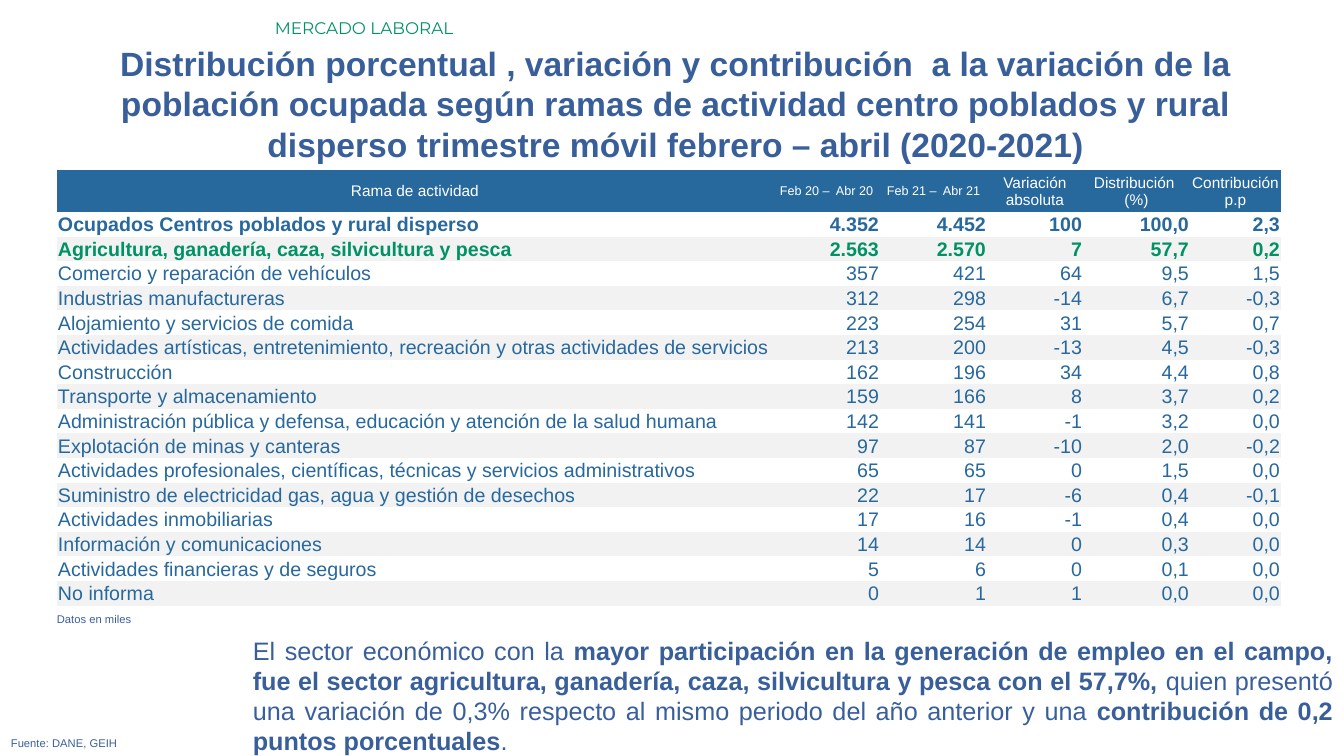
"""Build the slide on employment by branch of activity in rural areas."""
from pptx import Presentation
from pptx.dml.color import RGBColor
from pptx.enum.text import MSO_ANCHOR, MSO_AUTO_SIZE, PP_ALIGN
from pptx.util import Pt

SCALE = 914400 / 100.8
BLUE = RGBColor(0x39, 0x5F, 0x9B)
TEAL = RGBColor(0x27, 0x68, 0x9D)
GREEN = RGBColor(0x00, 0x91, 0x65)
MINT = RGBColor(0x00, 0x92, 0x67)
GRAY = RGBColor(0xF2, 0xF2, 0xF2)
WHITE = RGBColor(0xFF, 0xFF, 0xFF)
PLAIN = "{2D5ABB26-0587-4C30-8999-92F81FD0307C}"


def px(n):
    return round(n * SCALE)


def style(font, color, **form):
    for key, value in form.items():
        setattr(font, key, value)
    font.color.rgb = color


deck = Presentation()
deck.slide_width, deck.slide_height = px(1344), px(756)
slide = deck.slides.add_slide(deck.slide_layouts[6])

texts = [
    ((45, 38, 1261, 132), PP_ALIGN.CENTER, "Arial", 24, BLUE, [
        ("Distribución porcentual , variación y contribución  a la variación de la "
         "población ocupada según ramas de actividad centro poblados y rural disperso "
         "trimestre móvil febrero – abril (2020-2021)", True)]),
    ((265, 13, 1079, 30), PP_ALIGN.LEFT, "Montserrat", 12, MINT, [("MERCADO LABORAL", False)]),
    ((243, 630, 1100, 132), PP_ALIGN.JUSTIFY, "Arial", 18, BLUE, [
        ("El sector económico con la ", False),
        ("mayor participación en la generación de empleo en el campo, fue el sector "
         "agricultura, ganadería, caza, silvicultura y pesca con el 57,7%, ", True),
        ("quien presentó una variación de 0,3% respecto al mismo periodo del año "
         "anterior y una ", False),
        ("contribución de 0,2 puntos porcentuales", True),
        (".", False)]),
    ((1, 731, 1301, 24), PP_ALIGN.JUSTIFY, "Arial", 8, BLUE, [("Fuente: DANE, GEIH", False)]),
    ((47, 607, 1301, 24), PP_ALIGN.JUSTIFY, "Arial", 8, BLUE, [("Datos en miles", False)]),
]
for place, align, name, size, color, runs in texts:
    frame = slide.shapes.add_textbox(*map(px, place)).text_frame
    frame.word_wrap = True
    frame.auto_size = MSO_AUTO_SIZE.SHAPE_TO_FIT_TEXT
    para = frame.paragraphs[0]
    para.alignment = align
    for words, bold in runs:
        run = para.add_run()
        run.text = words
        style(run.font, color, name=name, size=Pt(size), bold=bold)

rows = [
    ("Rama de actividad", "Feb 20 –  Abr 20", "Feb 21 –  Abr 21",
     "Variación\vabsoluta", "Distribución \n(%)", "Contribución \np.p"),
    ("Ocupados Centros poblados y rural disperso", "4.352", "4.452", "100", "100,0", "2,3"),
    ("Agricultura, ganadería, caza, silvicultura y pesca", "2.563", "2.570", "7", "57,7", "0,2"),
    ("Comercio y reparación de vehículos", "357", "421", "64", "9,5", "1,5"),
    ("Industrias manufactureras", "312", "298", "-14", "6,7", "-0,3"),
    ("Alojamiento y servicios de comida", "223", "254", "31", "5,7", "0,7"),
    ("Actividades artísticas, entretenimiento, recreación y otras actividades de servicios",
     "213", "200", "-13", "4,5", "-0,3"),
    ("Construcción", "162", "196", "34", "4,4", "0,8"),
    ("Transporte y almacenamiento", "159", "166", "8", "3,7", "0,2"),
    ("Administración pública y defensa, educación y atención de la salud humana",
     "142", "141", "-1", "3,2", "0,0"),
    ("Explotación de minas y canteras", "97", "87", "-10", "2,0", "-0,2"),
    ("Actividades profesionales, científicas, técnicas y servicios administrativos",
     "65", "65", "0", "1,5", "0,0"),
    ("Suministro de electricidad gas, agua y gestión de desechos",
     "22", "17", "-6", "0,4", "-0,1"),
    ("Actividades inmobiliarias", "17", "16", "-1", "0,4", "0,0"),
    ("Información y comunicaciones", "14", "14", "0", "0,3", "0,0"),
    ("Actividades financieras y de seguros", "5", "6", "0", "0,1", "0,0"),
    ("No informa", "0", "1", "1", "0,0", "0,0"),
]
widths = [716, 107, 107, 96, 107, 91]
head, body = 42, 394
grid = slide.shapes.add_table(
    len(rows), len(widths), px(57), px(170), px(sum(widths)), px(head + body)).table
grid.first_row = grid.horz_banding = False
grid._tbl.tblPr[0].text = PLAIN
for col, width in zip(grid.columns, widths):
    col.width = px(width)

inset = {"margin_left": px(1), "margin_right": px(1), "margin_top": px(1),
         "margin_bottom": 0, "vertical_anchor": MSO_ANCHOR.MIDDLE}
for i, row in enumerate(rows):
    grid.rows[i].height = px(body / (len(rows) - 1)) if i else px(head)
    for j, words in enumerate(row):
        cell = grid.cell(i, j)
        for key, value in inset.items():
            setattr(cell, key, value)
        if i == 0:
            fill, color, size = TEAL, WHITE, 9 if j in (1, 2) else 11
            align = PP_ALIGN.CENTER
        else:
            fill, color, size = None if i % 2 else GRAY, GREEN if i == 2 else TEAL, 14
            align = PP_ALIGN.RIGHT if j else PP_ALIGN.LEFT
        if fill is None:
            cell.fill.background()
        else:
            cell.fill.solid()
            cell.fill.fore_color.rgb = fill
        cell.text_frame.text = words
        for para in cell.text_frame.paragraphs:
            para.alignment = align
            for run in para.runs:
                style(run.font, color, name="Arial", size=Pt(size), bold=i in (1, 2))

deck.save("out.pptx")
